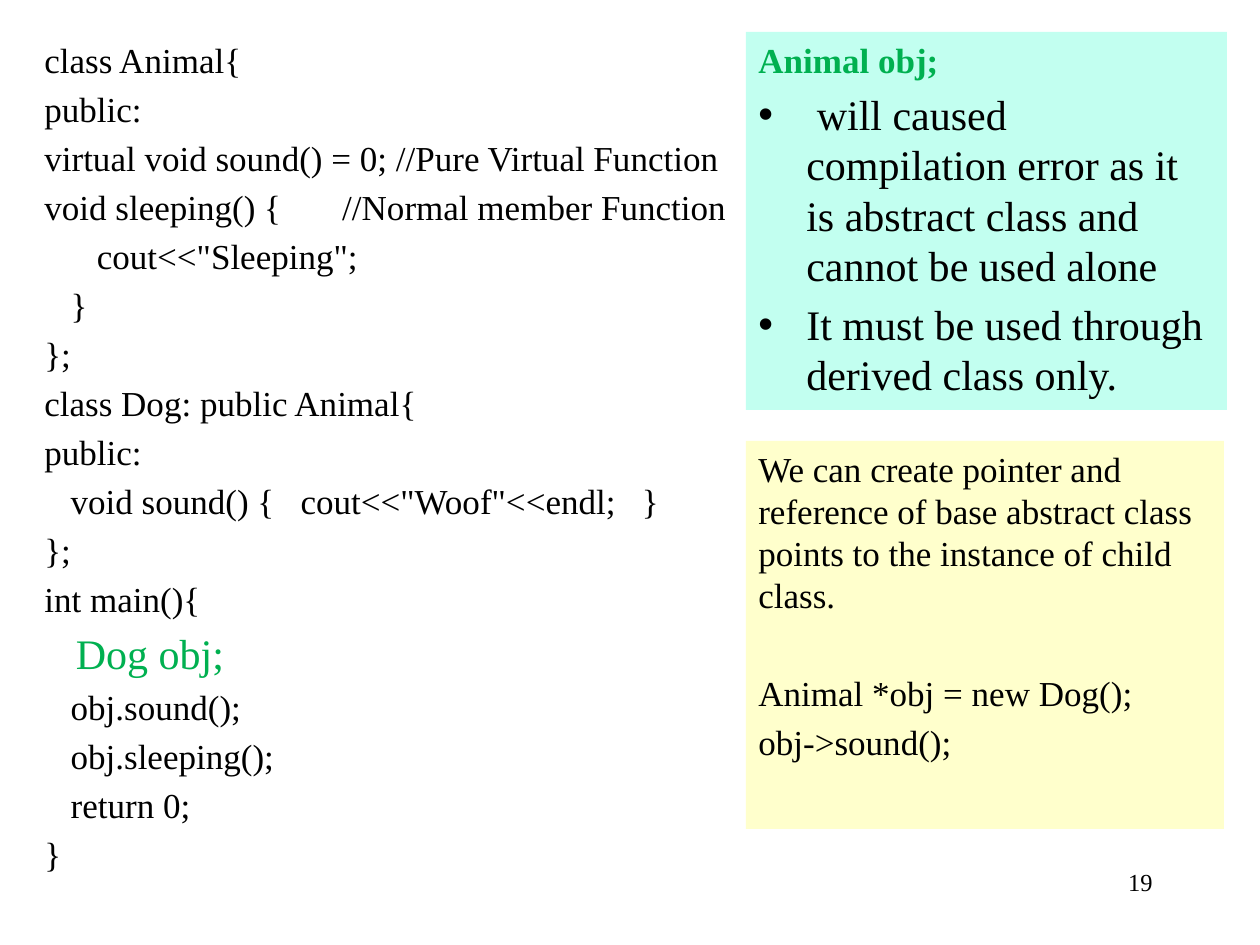
import pptx
import pptx.dml.color
import pptx.enum.shapes
import pptx.enum.text
import pptx.oxml.ns
import pptx.util
from lxml import etree

PX = 914400 / 126
FONT = "Times New Roman"
BLACK = pptx.dml.color.RGBColor(0x00, 0x00, 0x00)
GREEN = pptx.dml.color.RGBColor(0x00, 0xB0, 0x50)
MINT = pptx.dml.color.RGBColor(0xC2, 0xFF, 0xF0)
CREAM = pptx.dml.color.RGBColor(0xFF, 0xFF, 0xCC)


def px(length):
    return pptx.util.Emu(round(length * PX))


def write(frame, lines, size=20):
    """Fill a frame with left-aligned lines, each spaced by 20% of its size."""
    frame.word_wrap = True
    frame.vertical_anchor = pptx.enum.text.MSO_ANCHOR.TOP
    frame.text = "\n".join(lines)
    for index, paragraph in enumerate(frame.paragraphs):
        paragraph.alignment = pptx.enum.text.PP_ALIGN.LEFT
        if index:
            paragraph.space_before = pptx.util.Pt(size * 0.2)
        for run in paragraph.runs:
            run.font.name = FONT
            run.font.size = pptx.util.Pt(size)
            run.font.color.rgb = BLACK


deck = pptx.Presentation()
deck.slide_width, deck.slide_height = px(1260), px(945)
slide = deck.slides.add_slide(deck.slide_layouts[6])

# Program listing
code_lines = [
    "class Animal{",
    "public:",
    "virtual void sound() = 0; //Pure Virtual Function",
    "void sleeping() {       //Normal member Function",
    "      cout<<\"Sleeping\";",
    "   }",
    "};",
    "class Dog: public Animal{",
    "public:",
    "   void sound() {   cout<<\"Woof\"<<endl;   }",
    "};",
    "int main(){",
    "   Dog obj;",
    "   obj.sound();",
    "   obj.sleeping();",
    "   return 0;",
    "}",
]
listing = slide.shapes.add_textbox(px(32), px(32), px(714), px(872)).text_frame
write(listing, code_lines)
dog_line = listing.paragraphs[code_lines.index("   Dog obj;")]
dog_line.space_before = pptx.util.Pt(4.8)
dog_line.runs[0].font.size = pptx.util.Pt(24)
dog_line.runs[0].font.color.rgb = GREEN

# Note panels
panels = []
for top, width, height, color in ((32, 481, 378, MINT), (441, 478, 388, CREAM)):
    panel = slide.shapes.add_shape(
        pptx.enum.shapes.MSO_SHAPE.RECTANGLE, px(746), px(top), px(width), px(height))
    panel.shadow.inherit = False
    panel.fill.solid()
    panel.fill.fore_color.rgb = color
    panel.line.fill.background()
    panels.append(panel.text_frame)
abstract_note, pointer_note = panels

# Abstract class: heading and bullets
write(abstract_note, [
    "Animal obj;",
    " will caused compilation error as it is abstract class and cannot be used alone",
    "It must be used through derived class only.",
], size=24)
heading, *bullets = abstract_note.paragraphs
heading.runs[0].font.size = pptx.util.Pt(20)
heading.runs[0].font.bold = True
heading.runs[0].font.color.rgb = GREEN
for bullet in bullets:
    properties = bullet._p.get_or_add_pPr()
    properties.set("marL", str(px(48)))
    properties.set("indent", str(-px(48)))
    etree.SubElement(properties, pptx.oxml.ns.qn("a:buFont"), typeface="Arial")
    etree.SubElement(properties, pptx.oxml.ns.qn("a:buChar"), char="•")

# Pointer to the base class: explanation, gap, example
write(pointer_note, [
    "We can create pointer and reference of base abstract class points to "
    "the instance of child class.",
    "Animal *obj = new Dog();",
    "obj->sound();",
])
pointer_note.paragraphs[1].space_before = pptx.util.Pt(32)

# Page number
page_number = slide.shapes.add_textbox(px(903), px(861), px(262), px(63)).text_frame
write(page_number, ["19"], size=14)
page_number.paragraphs[0].alignment = pptx.enum.text.PP_ALIGN.RIGHT

deck.save("out.pptx")
